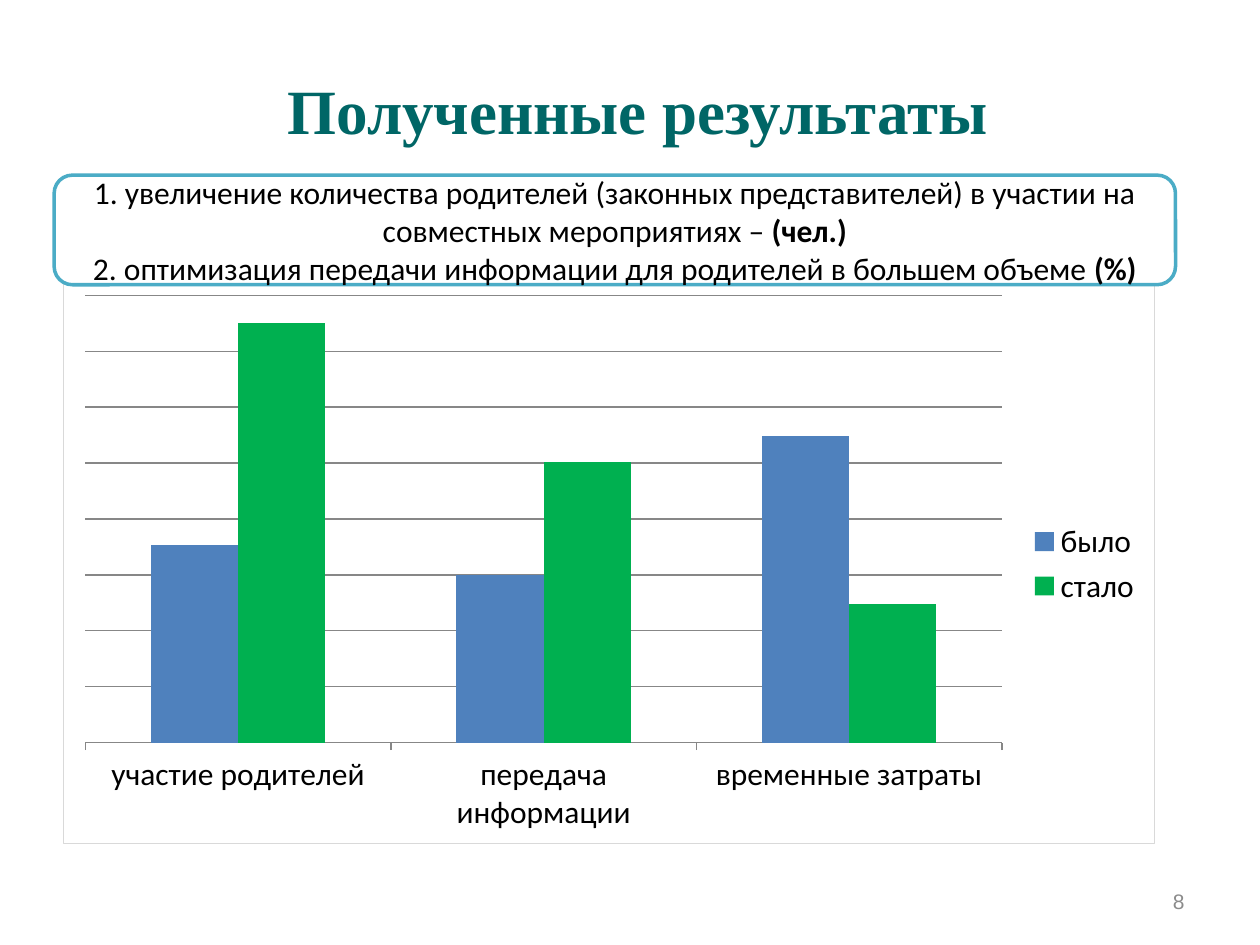
from lxml import etree
from pptx import Presentation
from pptx.chart.data import CategoryChartData
from pptx.dml.color import RGBColor
from pptx.enum.chart import XL_CHART_TYPE, XL_LEGEND_POSITION, XL_TICK_MARK
from pptx.enum.shapes import MSO_SHAPE
from pptx.enum.text import MSO_ANCHOR, PP_ALIGN
from pptx.oxml import parse_xml
from pptx.oxml.ns import nsdecls, qn
from pptx.util import Inches, Pt

COLORS = {
    "title": "006666", "text": "000000", "panel": "FFFFFF", "outline": "4BACC6",
    "before": "4F81BD", "after": "00B050", "axis": "878787", "border": "D9D9D9",
    "number": "8B8B8B",
}
CATEGORIES = ["участие родителей", "передача информации", "временные затраты"]
SERIES = [
    ("было", (47, 40, 73), "before"),
    ("стало", (100, 67, 33), "after"),
]
RESULTS = [
    ("1. увеличение количества родителей (законных представителей) в участии на "
     "совместных мероприятиях – ", "(чел.)"),
    ("2. оптимизация передачи информации для родителей в большем объеме ", "(%)"),
]
GRID_STEP = 13.33
GRID_COUNT = 8


def rgb(name):
    return RGBColor.from_string(COLORS[name])


def set_font(font, face, size, color, bold=None):
    font.name, font.size, font.bold = face, Pt(size), bold
    font.color.rgb = rgb(color)


def set_line(line, color, width):
    line.color.rgb = rgb(color)
    line.width = Pt(width)


def add_title(s, x, y, w, h):
    title = s.shapes.title
    title.left, title.top, title.width, title.height = map(Inches, (x, y, w, h))
    tf = title.text_frame
    tf.text = "Полученные результаты"
    tf.word_wrap = False
    tf.vertical_anchor = MSO_ANCHOR.TOP
    p = tf.paragraphs[0]
    p.alignment = PP_ALIGN.CENTER
    set_font(p.font, "Times New Roman", 36, "title", True)


def frame_chart(chart, x, y, w, h):
    """Outline the chart and fix its plot area, given as fractions of the chart."""
    c_chart = chart.element.find(qn("c:chart"))
    c_chart.addnext(parse_xml(
        f'<c:spPr {nsdecls("c", "a")}><a:noFill/><a:ln w="{Pt(0.75)}"><a:solidFill>'
        f'<a:srgbClr val="{COLORS["border"]}"/></a:solidFill></a:ln></c:spPr>'))
    plot_area = c_chart.find(qn("c:plotArea"))
    for old in plot_area.findall(qn("c:layout")):
        plot_area.remove(old)
    layout = etree.Element(qn("c:layout"))
    manual = etree.SubElement(layout, qn("c:manualLayout"))
    settings = {"layoutTarget": "inner", "xMode": "edge", "yMode": "edge",
                "x": x, "y": y, "w": w, "h": h}
    for tag, value in settings.items():
        etree.SubElement(manual, qn(f"c:{tag}")).set("val", str(value))
    plot_area.insert(0, layout)


def add_results_chart(s, x, y, w, h):
    data = CategoryChartData()
    data.categories = CATEGORIES
    for name, values, _ in SERIES:
        data.add_series(name, values)
    chart = s.shapes.add_chart(XL_CHART_TYPE.COLUMN_CLUSTERED,
                               *map(Inches, (x, y, w, h)), data).chart
    chart.has_title = False
    set_font(chart.font, "Arial", 10, "text")

    plot = chart.plots[0]
    plot.gap_width, plot.overlap = 150, 0
    plot.vary_by_categories = False
    for series, (_, _, color) in zip(plot.series, SERIES):
        series.format.fill.solid()
        series.format.fill.fore_color.rgb = rgb(color)

    cat_axis = chart.category_axis
    cat_axis.major_tick_mark = XL_TICK_MARK.OUTSIDE
    set_line(cat_axis.format.line, "axis", 0.75)
    set_font(cat_axis.tick_labels.font, "Calibri", 18, "text")

    val_axis = chart.value_axis
    val_axis.minimum_scale = 0
    val_axis.maximum_scale = GRID_STEP * GRID_COUNT
    val_axis.major_unit = GRID_STEP
    val_axis.has_major_gridlines = True
    set_line(val_axis.major_gridlines.format.line, "axis", 0.75)
    val_axis.visible = False

    chart.has_legend = True
    chart.legend.position = XL_LEGEND_POSITION.RIGHT
    chart.legend.include_in_layout = False
    set_font(chart.legend.font, "Calibri", 18, "text")
    frame_chart(chart, 0.02, 0.02, 0.84, 0.8)


def add_results_panel(s, x, y, w, h):
    sp = s.shapes.add_shape(MSO_SHAPE.ROUNDED_RECTANGLE, *map(Inches, (x, y, w, h)))
    sp.shadow.inherit = False
    sp.fill.solid()
    sp.fill.fore_color.rgb = rgb("panel")
    set_line(sp.line, "outline", 2)
    tf = sp.text_frame
    tf.word_wrap = True
    tf.vertical_anchor = MSO_ANCHOR.MIDDLE
    for i, (result, unit) in enumerate(RESULTS):
        p = tf.add_paragraph() if i else tf.paragraphs[0]
        p.alignment = PP_ALIGN.CENTER
        set_font(p.font, "Calibri", 18, "text")
        for text, bold in ((result, False), (unit, True)):
            r = p.add_run()
            r.text = text
            set_font(r.font, "Calibri", 18, "text", bold)


def add_slide_number(s, x, y, w, h):
    tf = s.shapes.add_textbox(*map(Inches, (x, y, w, h))).text_frame
    tf.word_wrap = True
    tf.vertical_anchor = MSO_ANCHOR.MIDDLE
    p = tf.paragraphs[0]
    p.text = "8"
    p.alignment = PP_ALIGN.RIGHT
    set_font(p.font, "Arial", 12, "number")


def main():
    prs = Presentation()
    prs.slide_width, prs.slide_height = Inches(10), Inches(7.5)
    s = prs.slides.add_slide(prs.slide_layouts[5])
    add_results_chart(s, 0.5, 2.25, 8.67, 4.45)
    add_results_panel(s, 0.43, 1.39, 8.9, 0.87)
    add_title(s, 2.12, 0.52, 5.88, 0.7)
    add_slide_number(s, 7.17, 6.95, 2.33, 0.4)
    prs.save("out.pptx")


if __name__ == "__main__":
    main()
